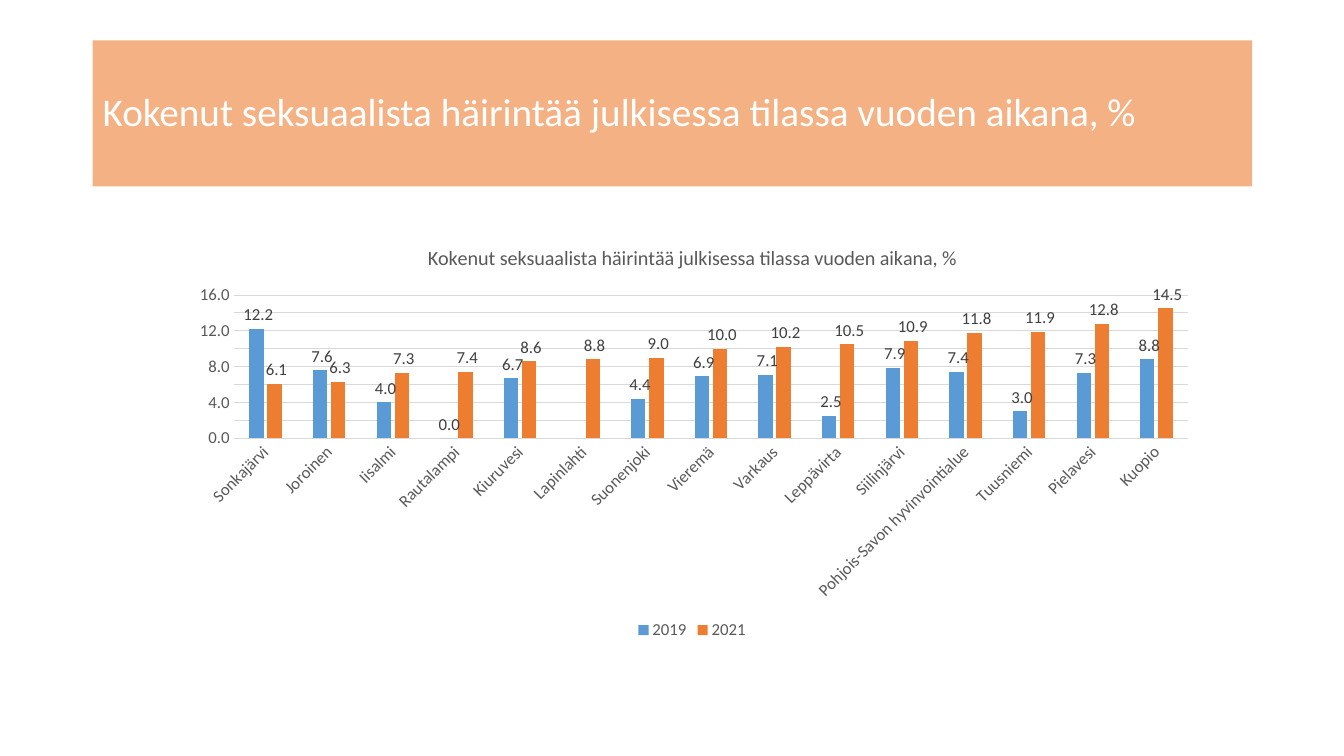
from pptx import Presentation
from pptx import util as u
from pptx.chart.data import CategoryChartData
from pptx.dml.color import RGBColor
from pptx.enum import chart as ch, shapes, text

TITLE = "Kokenut seksuaalista häirintää julkisessa tilassa vuoden aikana, %"
NUMBER_FORMAT = r"#\ ##0.0"
RESULTS = [
    ("Sonkajärvi", 12.2, 6.1),
    ("Joroinen", 7.6, 6.3),
    ("Iisalmi", 4, 7.3),
    ("Rautalampi", 0, 7.4),
    ("Kiuruvesi", 6.7, 8.6),
    ("Lapinlahti", None, 8.8),
    ("Suonenjoki", 4.4, 9),
    ("Vieremä", 6.9, 10),
    ("Varkaus", 7.1, 10.2),
    ("Leppävirta", 2.5, 10.5),
    ("Siilinjärvi", 7.9, 10.9),
    ("Pohjois-Savon hyvinvointialue", 7.4, 11.8),
    ("Tuusniemi", 3, 11.9),
    ("Pielavesi", 7.3, 12.8),
    ("Kuopio", 8.8, 14.5),
]


def rgb(value):
    return RGBColor.from_string(value)


def style_font(font, size, color):
    font.name = "Calibri"
    font.size = u.Pt(size)
    font.bold = False
    font.color.rgb = rgb(color)


deck = Presentation()
deck.slide_width = u.Inches(13.33)
deck.slide_height = u.Inches(7.5)
page = deck.slides.add_slide(deck.slide_layouts[6])

banner = page.shapes.add_shape(
    shapes.MSO_SHAPE.RECTANGLE,
    u.Inches(0.92), u.Inches(0.4), u.Inches(11.5), u.Inches(1.45))
banner.shadow.inherit = False
banner.fill.solid()
banner.fill.fore_color.rgb = rgb("F4B183")
banner.line.fill.background()
box = banner.text_frame
box.word_wrap = True
box.vertical_anchor = text.MSO_ANCHOR.MIDDLE
para = box.paragraphs[0]
para.alignment = text.PP_ALIGN.LEFT
para.line_spacing = 0.9
span = para.add_run()
span.text = TITLE
style_font(span.font, 28, "FFFFFF")

names, values_2019, values_2021 = zip(*RESULTS)
data = CategoryChartData(number_format=NUMBER_FORMAT)
data.categories = names
data.add_series("2019", values_2019)
data.add_series("2021", values_2021)
chart = page.shapes.add_chart(
    ch.XL_CHART_TYPE.COLUMN_CLUSTERED,
    u.Inches(1.74), u.Inches(2.25), u.Inches(10.25), u.Inches(4.14), data).chart
style_font(chart.font, 12, "000000")

chart.has_title = True
para = chart.chart_title.text_frame.paragraphs[0]
span = para.add_run()
span.text = TITLE
style_font(span.font, 14.4, "595959")
chart.chart_title.include_in_layout = False

chart.has_legend = True
chart.legend.position = ch.XL_LEGEND_POSITION.BOTTOM
chart.legend.include_in_layout = False
style_font(chart.legend.font, 12, "595959")

for axis in (chart.category_axis, chart.value_axis):
    axis.major_tick_mark = ch.XL_TICK_MARK.NONE
    axis.minor_tick_mark = ch.XL_TICK_MARK.NONE
    style_font(axis.tick_labels.font, 12, "595959")

chart.value_axis.format.line.fill.background()
chart.value_axis.has_major_gridlines = True
chart.value_axis.tick_labels.number_format = NUMBER_FORMAT
chart.value_axis.tick_labels.number_format_is_linked = False
for line in (chart.category_axis.format.line,
             chart.value_axis.major_gridlines.format.line):
    line.color.rgb = rgb("D9D9D9")
    line.width = u.Pt(0.75)

plot = chart.plots[0]
plot.gap_width = 219
plot.overlap = -27
plot.vary_by_categories = False
for series, color in zip(plot.series, ("5B9BD5", "ED7D31")):
    series.invert_if_negative = False
    series.format.fill.solid()
    series.format.fill.fore_color.rgb = rgb(color)
    labels = series.data_labels
    labels.show_value = True
    labels.position = ch.XL_LABEL_POSITION.OUTSIDE_END
    labels.number_format = NUMBER_FORMAT
    labels.number_format_is_linked = False
    style_font(labels.font, 12, "404040")

deck.save("out.pptx")
